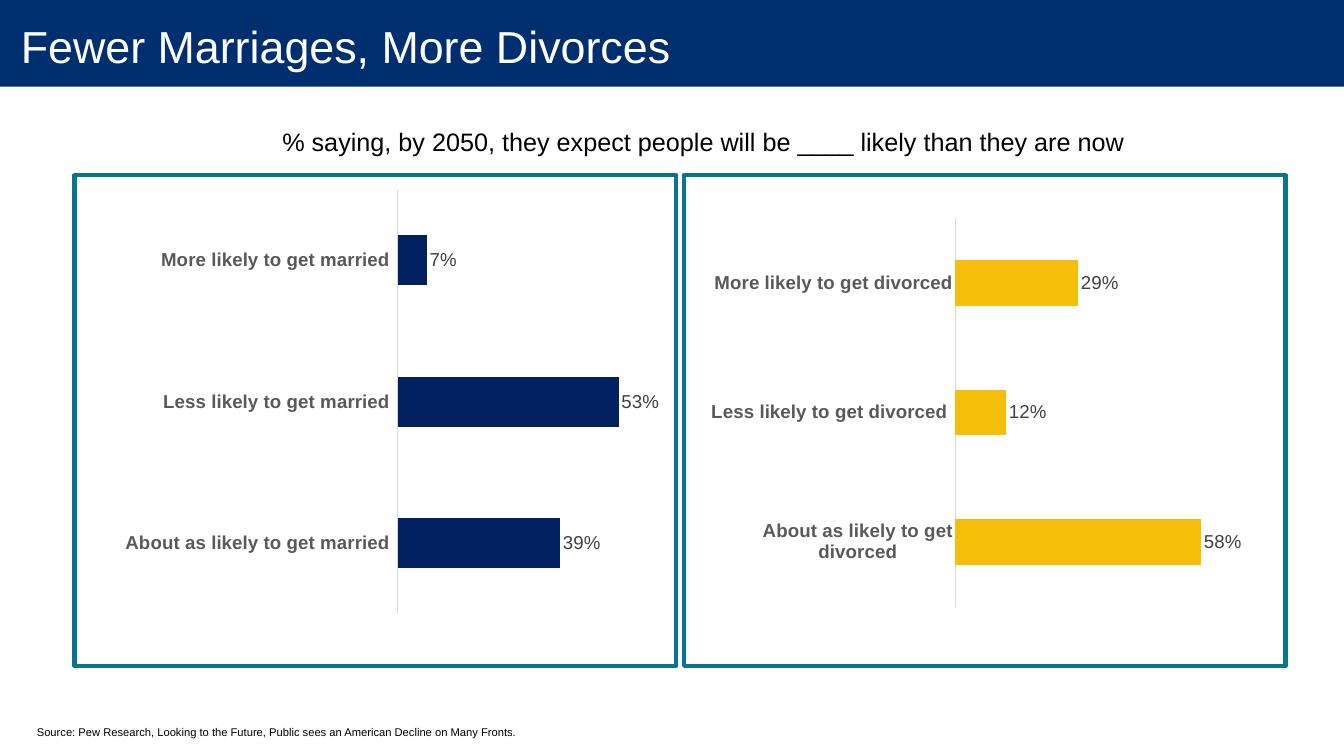
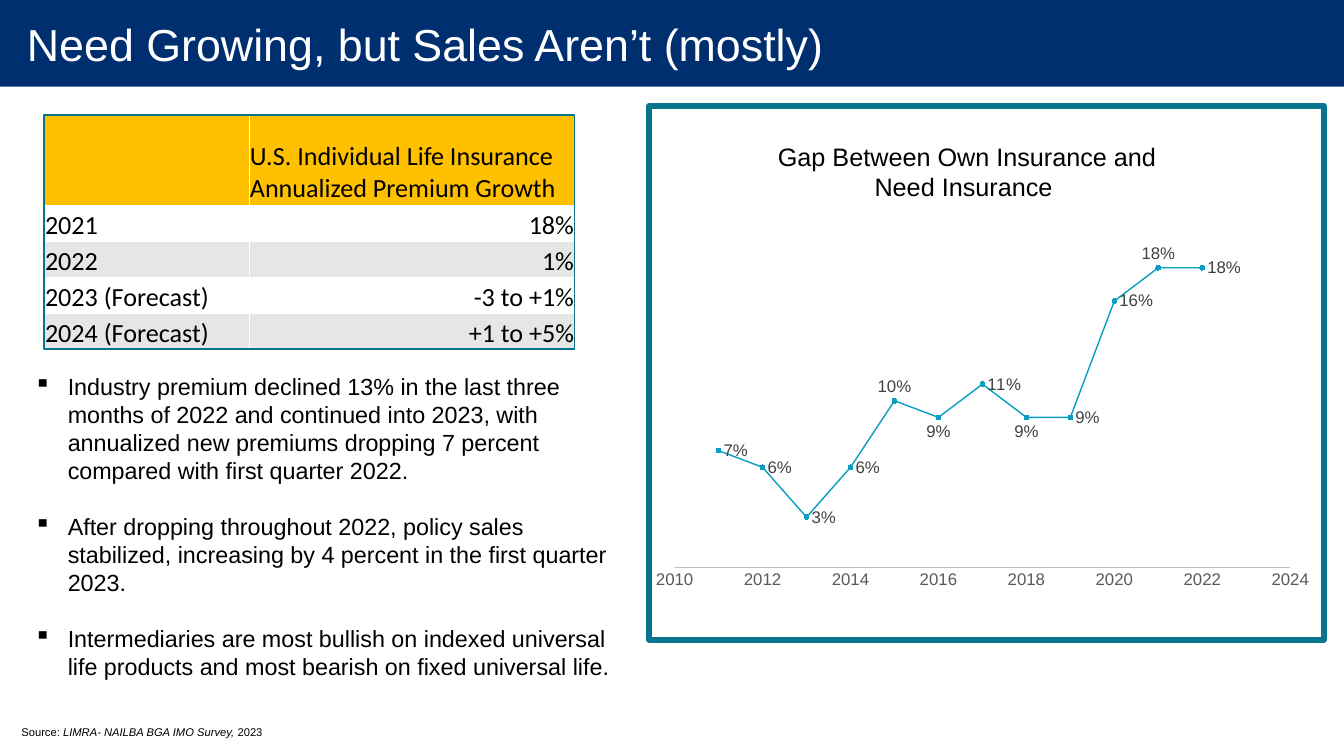
import pptx
import pptx.util
import pptx.chart.data
import pptx.dml.color
import pptx.enum.chart
import pptx.enum.shapes
import pptx.enum.text
import pptx.oxml
import pptx.oxml.ns
from lxml import etree

Inches, Pt = pptx.util.Inches, pptx.util.Pt
Align, Anchor = pptx.enum.text.PP_ALIGN, pptx.enum.text.MSO_ANCHOR
Kind, Spot = pptx.enum.chart.XL_CHART_TYPE, pptx.enum.chart.XL_LABEL_POSITION
qn = pptx.oxml.ns.qn

# Shared look
HUES = {
    "band": "002F70", "teal": "08758F", "navy": "002060", "gold": "F5BE0B",
    "head": "FFC000", "gray": "E7E6E6", "white": "FFFFFF", "black": "000000",
    "line": "0B9EC1", "axis": "595959", "label": "404040",
    "pale": "D9D9D9", "rule": "BFBFBF",
}
FONT = "Arial"

# Slide 1 content
WED = {
    "title": "Fewer Marriages, More Divorces",
    "source": [("Source: Pew Research, Looking to the Future, "
                "Public sees an American Decline on Many Fronts.", False)],
    "ask": "% saying, by 2050, they expect people will be ____ likely than they are now",
}
BARS = [
    {"box": (1.71, 2.69, 8.1, 6.58), "plot": (0.52, 0.02, 0.46, 0.96),
     "hue": "navy", "top": 0.6,
     "data": [("About as likely to get married ", 0.39),
              ("Less likely to get married ", 0.53),
              ("More likely to get married ", 0.07)]},
    {"box": (10.51, 3.19, 8.83, 6.08), "plot": (0.42, 0.01, 0.5, 0.95),
     "hue": "gold", "top": 0.7,
     "data": [("About as likely to get divorced", 0.58),
              ("Less likely to get divorced ", 0.12),
              ("More likely to get divorced", 0.29)]},
]

# Slide 2 content
NEED = {
    "title": "Need Growing, but Sales Aren’t (mostly)",
    "source": [("Source: ", False), ("LIMRA- NAILBA BGA IMO Survey, ", True),
               ("2023", False)],
    "gap": "Gap Between Own Insurance and Need Insurance ",
}
GROWTH = [
    ("", "U.S. Individual Life Insurance Annualized Premium Growth"),
    ("2021", "18%"),
    ("2022", "1%"),
    ("2023 (Forecast)", "-3 to +1%"),
    ("2024 (Forecast)", "+1 to +5%"),
]
POINTS = [
    "Industry premium declined 13% in the last three months of 2022 and continued "
    "into 2023, with annualized new premiums dropping 7 percent compared with first "
    "quarter 2022.",
    "After dropping throughout 2022, policy sales stabilized, increasing by 4 percent "
    "in the first quarter 2023.",
    "Intermediaries are most bullish on indexed universal life products and most "
    "bearish on fixed universal life.",
]
START = 2011
GAPS = [0.07, 0.06, 0.03, 0.06, 0.1, 0.09, 0.11, 0.09, 0.09, 0.16, 0.18, 0.18]
MOVED = {4: Spot.ABOVE, 5: Spot.BELOW, 7: Spot.BELOW, 10: Spot.ABOVE}


def color(name):
    return pptx.dml.color.RGBColor.from_string(HUES[name])


def place(box):
    return [Inches(v) for v in box]


def style(font, size, hue="black", face=FONT, bold=False, slant=False):
    font.size, font.name = Pt(size), face
    font.bold, font.italic = bold, slant
    font.color.rgb = color(hue)


def write(par, text, size, hue="black", **look):
    run = par.add_run()
    run.text = text
    style(run.font, size, hue, **look)


def inset(item, left, top, right, bottom):
    item.margin_left, item.margin_top = Inches(left), Inches(top)
    item.margin_right, item.margin_bottom = Inches(right), Inches(bottom)


def add_text(slide, box, anchor=Anchor.TOP):
    frame = slide.shapes.add_textbox(*place(box)).text_frame
    frame.word_wrap = True
    frame.vertical_anchor = anchor
    return frame


def add_rect(slide, box, fill=None, line=None, width=0):
    rect = slide.shapes.add_shape(
        pptx.enum.shapes.MSO_SHAPE.RECTANGLE, *place(box))
    rect.shadow.inherit = False
    if fill:
        rect.fill.solid()
        rect.fill.fore_color.rgb = color(fill)
    else:
        rect.fill.background()
    if line:
        rect.line.color.rgb = color(line)
        rect.line.width = Pt(width)
    else:
        rect.line.fill.background()
    return rect


def add_slide(deck, info, box, pad, left):
    """Start a slide with its band, title and source line."""
    slide = deck.slides.add_slide(deck.slide_layouts[5])
    title = slide.shapes.title
    band = add_rect(slide, (0, 0, 20, 1.29), "band")
    title.element.addprevious(band.element)
    title.left, title.top, title.width, title.height = place(box)
    frame = title.text_frame
    frame.word_wrap = True
    frame.auto_size = pptx.enum.text.MSO_AUTO_SIZE.NONE
    frame.vertical_anchor = Anchor.MIDDLE
    inset(frame, pad, 0, 0.2, 0)
    par = frame.paragraphs[0]
    par.alignment = Align.LEFT
    write(par, info["title"], 48, "white")
    foot = add_text(slide, (left, 10.15, 8.77, 0.89), Anchor.BOTTOM)
    for text, slant in info["source"]:
        write(foot.paragraphs[0], text, 12, slant=slant)
    return slide


def add_head(slide, box, text):
    par = add_text(slide, box).paragraphs[0]
    par.alignment = Align.CENTER
    write(par, text, 27)


def set_plot(chart, plot):
    """Fix the inner plot area as fractions of the chart."""
    area = next(chart.element.iter(qn("c:plotArea")))
    for old in area.findall(qn("c:layout")):
        area.remove(old)
    layout = etree.Element(qn("c:layout"))
    manual = etree.SubElement(layout, qn("c:manualLayout"))
    pairs = [("layoutTarget", "inner"), ("xMode", "edge"), ("yMode", "edge")]
    for tag, val in pairs + list(zip("xywh", plot)):
        etree.SubElement(manual, qn("c:" + tag)).set("val", str(val))
    area.insert(0, layout)


def add_chart(slide, kind, box, data, plot, top, size, rule, bold):
    chart = slide.shapes.add_chart(kind, *place(box), data).chart
    chart.has_legend = chart.has_title = False
    style(chart.font, 10)
    set_plot(chart, plot)
    base, scale = chart.category_axis, chart.value_axis
    for axis in (base, scale):
        axis.has_major_gridlines = axis.has_minor_gridlines = False
        axis.major_tick_mark = pptx.enum.chart.XL_TICK_MARK.NONE
    base.format.line.color.rgb = color(rule)
    base.format.line.width = Pt(0.75)
    style(base.tick_labels.font, size, "axis", bold=bold)
    scale.minimum_scale, scale.maximum_scale = 0, top
    scale.visible = False
    plan = chart.plots[0]
    plan.vary_by_categories = False
    return chart, plan.series[0]


def add_bars(slide, bar):
    data = pptx.chart.data.CategoryChartData(number_format="0%")
    data.categories = [name for name, _ in bar["data"]]
    data.add_series("Series 1", [val for _, val in bar["data"]])
    chart, series = add_chart(slide, Kind.BAR_CLUSTERED, bar["box"], data,
                              bar["plot"], bar["top"], 20, "pale", True)
    chart.plots[0].gap_width = 182
    tags = series.data_labels
    tags.show_value = True
    tags.number_format, tags.number_format_is_linked = "0%", False
    tags.position = Spot.OUTSIDE_END
    style(tags.font, 20, "label")
    series.format.fill.solid()
    series.format.fill.fore_color.rgb = color(bar["hue"])


def add_trend(slide):
    data = pptx.chart.data.XyChartData(number_format="0%")
    row = data.add_series("Series 1")
    for year, val in enumerate(GAPS, START):
        row.add_data_point(year, val)
    chart, series = add_chart(slide, Kind.XY_SCATTER_LINES,
                              (9.53, 3.38, 10.18, 5.5), data,
                              (0.05, 0.02, 0.9, 0.9), 0.2, 18, "rule", False)
    years = chart.category_axis
    years.minimum_scale, years.maximum_scale, years.major_unit = 2010, 2024, 2
    years.tick_labels.number_format = "0"
    years.tick_labels.number_format_is_linked = False
    series.format.line.color.rgb = color("line")
    series.format.line.width = Pt(1.5)
    dot = series.marker
    dot.style, dot.size = pptx.enum.chart.XL_MARKER_STYLE.CIRCLE, 5
    dot.format.fill.solid()
    dot.format.fill.fore_color.rgb = color("line")
    dot.format.line.color.rgb = color("line")
    for n in range(len(GAPS)):
        tag = series.points[n].data_label
        style(tag.font, 18, "label")
        tag.position = MOVED.get(n, Spot.RIGHT)


def add_growth(slide, box):
    table = slide.shapes.add_table(len(GROWTH), 2, *place(box)).table
    table.first_row = table.horz_banding = False
    for col, width in zip(table.columns, (3.05, 4.84)):
        col.width = Inches(width)
    for r, row in enumerate(GROWTH):
        table.rows[r].height = Inches(0.54 if r else 1.34)
        fill = ("white" if r % 2 else "gray") if r else "head"
        for c, text in enumerate(row):
            cell = table.cell(r, c)
            cell.fill.solid()
            cell.fill.fore_color.rgb = color(fill)
            cell.vertical_anchor = Anchor.BOTTOM
            inset(cell, 0.01, 0.01, 0.01, 0)
            par = cell.text_frame.paragraphs[0]
            par.alignment = Align.RIGHT if r and c else Align.LEFT
            if text:
                write(par, text, 28, face="Calibri")
    add_rect(slide, box, line="teal", width=2)


def add_points(slide):
    frame = add_text(slide, (0.41, 5.49, 8.82, 4.73))
    for n, text in enumerate(POINTS):
        par = frame.add_paragraph() if n else frame.paragraphs[0]
        props = par._p.get_or_add_pPr()
        props.set("marL", str(Inches(0.5)))
        props.set("indent", str(-Inches(0.5)))
        etree.SubElement(props, qn("a:buChar")).set("char", "▪")
        if n:
            par.space_before = Pt(30)
        write(par, text, 25)


def main():
    deck = pptx.Presentation()
    deck.slide_width, deck.slide_height = Inches(20), Inches(11.25)

    # Slide 1: two framed bar charts
    slide = add_slide(deck, WED, (0.01, -0.05, 20, 1.46), 0.3, 0.45)
    for bar in BARS:
        add_bars(slide, bar)
    add_head(slide, (2.48, 1.83, 15.97, 0.56), WED["ask"])
    for n in range(len(BARS)):
        add_rect(slide, (1.11 + n * 9.07, 2.61, 8.95, 7.3), line="teal", width=4.5)

    # Slide 2: table and points beside the trend
    slide = add_slide(deck, NEED, (0, 0, 20, 1.29), 0.4, 0.22)
    add_trend(slide)
    add_head(slide, (11.14, 2.05, 6.5, 1), NEED["gap"])
    add_rect(slide, (9.66, 1.58, 10.04, 7.94), line="teal", width=6)
    add_growth(slide, (0.66, 1.71, 7.89, 3.48))
    add_points(slide)

    deck.save("out.pptx")


if __name__ == "__main__":
    main()
